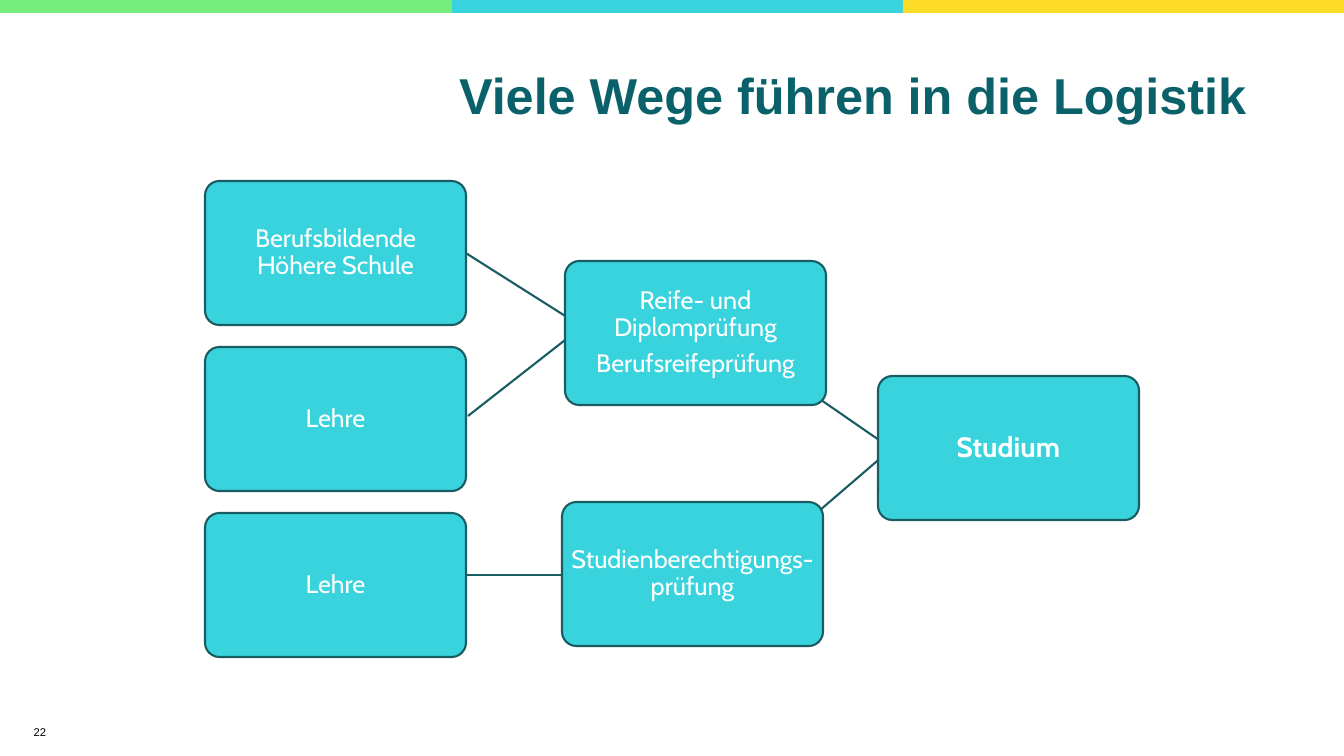
from dataclasses import dataclass

from pptx import Presentation
from pptx.dml.color import RGBColor
from pptx.enum.shapes import MSO_CONNECTOR, MSO_SHAPE
from pptx.enum.text import MSO_ANCHOR, PP_ALIGN
from pptx.oxml.ns import qn
from pptx.util import Pt
from lxml import etree

LEFT, CENTER, RIGHT = PP_ALIGN.LEFT, PP_ALIGN.CENTER, PP_ALIGN.RIGHT
MIDDLE = MSO_ANCHOR.MIDDLE
RECT, ROUNDED = MSO_SHAPE.RECTANGLE, MSO_SHAPE.ROUNDED_RECTANGLE
STRAIGHT = MSO_CONNECTOR.STRAIGHT


@dataclass(frozen=True)
class Theme:
    green: str = "77ED7D"
    cyan: str = "39D3DD"
    yellow: str = "FCDA28"
    heading: str = "0A6169"
    outline: str = "195C61"
    white: str = "FFFFFF"
    black: str = "000000"
    heading_font: str = "Arial"
    step_font: str = "Cabin"
    heading_size: int = 36
    step_size: int = 18
    goal_size: int = 20
    number_size: int = 8
    line_width: float = 1.5


THEME = Theme()

# Content, lengths in px
HEADING = "Viele Wege führen in die Logistik"
PAGE_NUMBER = "22"
SLIDE_W, SLIDE_H = 1344, 756
STRIPES = [(0, 452, THEME.green), (452, 451, THEME.cyan), (903, 441, THEME.yellow)]
STRIPE_H = 13
STEP_W, STEP_H = 261, 144
START_X, START_Y, START_PITCH = 205, 181, 166
STARTS = ["Berufsbildende Höhere Schule", "Lehre", "Lehre"]
EXAMS = [
    (565, 261, ["Reife- und Diplomprüfung", "Berufsreifeprüfung"]),
    (562, 502, ["Studienberechtigungs-prüfung"]),
]
GOAL = (878, 376, ["Studium"])
LINKS = [  # x1, y1, x2, y2
    (461, 250, 570, 319),
    (468, 416, 569, 337),
    (460, 575, 562, 575),
    (811, 393, 879, 440),
    (812, 517, 883, 456),
]


def px(length):
    return round(length * 914400 / 100.8)


def rgb(value):
    return RGBColor.from_string(value)


def add_text(paragraph, text, size, font, color, align, bold=False):
    paragraph.alignment = align
    run = paragraph.add_run()
    run.text = text
    run.font.size, run.font.name, run.font.bold = Pt(size), font, bold
    run.font.color.rgb = rgb(color)


def add_block(slide, preset, x, y, w, h, color):
    block = slide.shapes.add_shape(preset, px(x), px(y), px(w), px(h))
    block.shadow.inherit = False
    block.fill.solid()
    block.fill.fore_color.rgb = rgb(color)
    block.line.fill.background()
    return block


def add_link(slide, *ends):
    link = slide.shapes.add_connector(STRAIGHT, *map(px, ends))
    link.line.color.rgb = rgb(THEME.outline)
    link.line.width = Pt(THEME.line_width)
    etree.SubElement(link._element.spPr, qn("a:effectLst"))


def add_step(slide, x, y, lines, size=THEME.step_size, bold=False):
    step = add_block(slide, ROUNDED, x, y, STEP_W, STEP_H, THEME.cyan)
    step.adjustments[0] = 0.1
    step.line.color.rgb = rgb(THEME.outline)
    step.line.width = Pt(THEME.line_width)
    frame = step.text_frame
    frame.word_wrap = True
    frame.vertical_anchor = MIDDLE
    frame.margin_left = frame.margin_right = px(5)
    frame.margin_top = frame.margin_bottom = px(5)
    for index, line in enumerate(lines):
        paragraph = frame.add_paragraph() if index else frame.paragraphs[0]
        paragraph.line_spacing = 0.9
        paragraph.space_after = Pt(0.35 * size)
        add_text(paragraph, line, size, THEME.step_font, THEME.white, CENTER, bold)


def main():
    prs = Presentation()
    prs.slide_width, prs.slide_height = px(SLIDE_W), px(SLIDE_H)
    slide = prs.slides.add_slide(prs.slide_layouts[5])

    # Top stripes
    for x, width, color in STRIPES:
        add_block(slide, RECT, x, 0, width, STRIPE_H, color)

    # Heading
    heading = slide.shapes.title
    heading.left, heading.top = px(449), px(38)
    heading.width, heading.height = px(849), px(121)
    frame = heading.text_frame
    frame.word_wrap = True
    frame.vertical_anchor = MIDDLE
    frame.paragraphs[0].line_spacing = 0.9
    add_text(frame.paragraphs[0], HEADING, THEME.heading_size,
             THEME.heading_font, THEME.heading, LEFT, True)

    # Links lie behind the steps
    for link in LINKS:
        add_link(slide, *link)

    # Steps from school to university
    for row, start in enumerate(STARTS):
        add_step(slide, START_X, START_Y + row * START_PITCH, [start])
    for exam in EXAMS:
        add_step(slide, *exam)
    add_step(slide, *GOAL, size=THEME.goal_size, bold=True)

    # Page number
    number = slide.shapes.add_textbox(px(7), px(712), px(49), px(40)).text_frame
    number.word_wrap = True
    number.vertical_anchor = MIDDLE
    add_text(number.paragraphs[0], PAGE_NUMBER, THEME.number_size,
             THEME.heading_font, THEME.black, RIGHT)

    prs.save("out.pptx")


if __name__ == "__main__":
    main()
